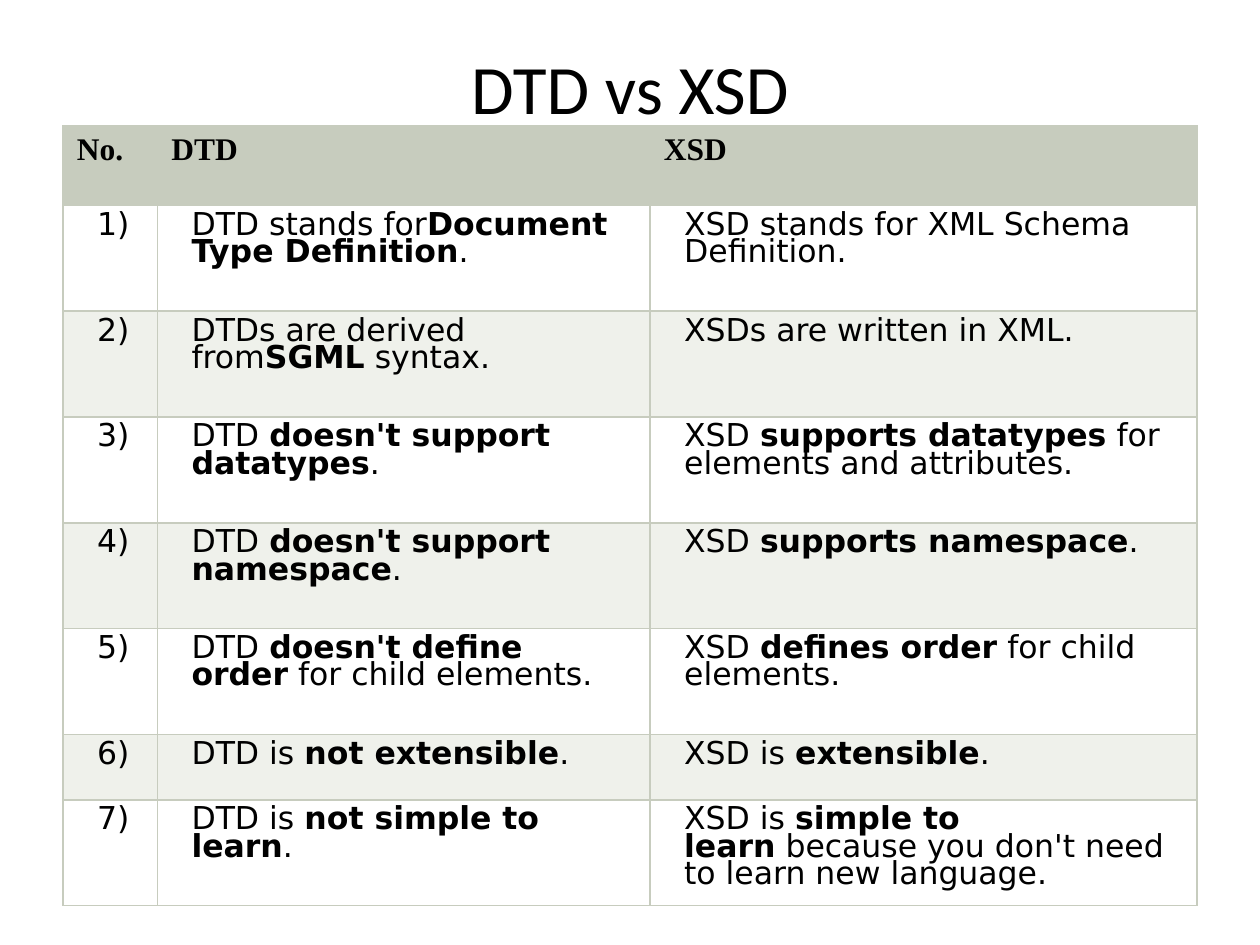
from dataclasses import dataclass

from pptx import Presentation
from pptx import util as u
from pptx.dml.color import RGBColor
from pptx.enum import text
from pptx.oxml import parse_xml
from pptx.oxml.ns import nsdecls


@dataclass(frozen=True)
class Theme:
    ink: str = "000000"
    accent: str = "C7CCBE"
    bands: tuple = ("FFFFFF", "EFF1EB")
    title_font: str = "Calibri"
    header_font: str = "Times New Roman"
    body_font: str = "DejaVu Sans"
    title_size: float = 39.6
    cell_size: float = 18
    line_spacing: float = 15.6
    border: float = 1


@dataclass(frozen=True)
class CellStyle:
    font: str
    margin: float
    indent: float
    bold: bool = False


@dataclass(frozen=True)
class Comparison:
    """One table row; asterisks enclose bold words."""
    dtd: str
    xsd: str
    height: float = 0.84


THEME = Theme()
HEADER = CellStyle(THEME.header_font, 0.11, 0, True)
BODY = CellStyle(THEME.body_font, 0.08, 0.19)
HEADINGS = ("No.", "DTD", "XSD")
HEADER_HEIGHT = 0.63
COLUMN_WIDTHS = (0.75, 3.91, 4.34)
NBSP = chr(160)

COMPARISONS = (
    Comparison("DTD stands for*Document Type Definition*.",
               "XSD stands for XML Schema Definition."),
    Comparison("DTDs are derived from*SGML* syntax.",
               "XSDs are written in XML."),
    Comparison("DTD *doesn't support datatypes*.",
               "XSD *supports datatypes* for elements and attributes."),
    Comparison("DTD *doesn't support namespace*.",
               "XSD *supports namespace*."),
    Comparison("DTD *doesn't define order* for child elements.",
               "XSD *defines order* for child elements."),
    Comparison("DTD is *not extensible*.", "XSD is *extensible*.", 0.52),
    Comparison("DTD is *not simple to learn*.",
               "XSD is *simple to learn* because you don't need to learn new language."),
)


def add_run(p, words: str, font: str, size: float, bold: bool = False) -> None:
    r = p.add_run()
    r.text = words
    for name, value in {"name": font, "size": u.Pt(size), "bold": bold}.items():
        setattr(r.font, name, value)
    r.font.color.rgb = RGBColor.from_string(THEME.ink)


def add_title(s, words: str) -> None:
    sp = s.shapes.add_textbox(u.Inches(0.5), u.Inches(0.3), u.Inches(9), u.Inches(0.78))
    tf = sp.text_frame
    tf.word_wrap = True
    tf.vertical_anchor = text.MSO_ANCHOR.MIDDLE
    p = tf.paragraphs[0]
    p.alignment = text.PP_ALIGN.CENTER
    add_run(p, words, THEME.title_font, THEME.title_size)


def add_borders(cell) -> None:
    """Line all four sides; borders must precede the fill in tcPr."""
    tc_pr = cell._tc.get_or_add_tcPr()
    for i, side in enumerate(("lnL", "lnR", "lnT", "lnB")):
        tc_pr.insert(i, parse_xml(
            f'<a:{side} {nsdecls("a")} w="{u.Pt(THEME.border)}"><a:solidFill>'
            f'<a:srgbClr val="{THEME.accent}"/></a:solidFill></a:{side}>'))


def fill_cell(cell, words: str, style: CellStyle, color: str) -> None:
    for side in ("left", "top", "right", "bottom"):
        setattr(cell, f"margin_{side}", u.Inches(style.margin))
    cell.vertical_anchor = text.MSO_ANCHOR.TOP
    cell.fill.solid()
    cell.fill.fore_color.rgb = RGBColor.from_string(color)
    add_borders(cell)

    p = cell.text_frame.paragraphs[0]
    p.line_spacing = u.Pt(THEME.line_spacing)
    p_pr = p._p.get_or_add_pPr()
    p_pr.set("marL", str(u.Inches(style.indent)))
    p_pr.set("indent", "0")
    # Spaces that touch bold words do not break.
    marked = words.replace(" *", NBSP + "*").replace("* ", "*" + NBSP)
    for i, part in enumerate(marked.split("*")):
        add_run(p, part, style.font, THEME.cell_size, style.bold or i % 2 == 1)


def add_comparison_table(s) -> None:
    heights = [HEADER_HEIGHT] + [c.height for c in COMPARISONS]
    frame = s.shapes.add_table(len(heights), len(COLUMN_WIDTHS), u.Inches(0.5), u.Inches(1),
                               u.Inches(sum(COLUMN_WIDTHS)), u.Inches(sum(heights)))
    table = frame.table
    for column, width in zip(table.columns, COLUMN_WIDTHS):
        column.width = u.Inches(width)
    for row, height in zip(table.rows, heights):
        row.height = u.Inches(height)

    for col, heading in enumerate(HEADINGS):
        fill_cell(table.cell(0, col), heading, HEADER, THEME.accent)
    for number, item in enumerate(COMPARISONS, start=1):
        band = THEME.bands[(number - 1) % 2]
        for col, words in enumerate((f"{number})", item.dtd, item.xsd)):
            fill_cell(table.cell(number, col), words, BODY, band)


def main() -> None:
    prs = Presentation()
    prs.slide_width, prs.slide_height = u.Inches(10), u.Inches(7.5)
    s = prs.slides.add_slide(prs.slide_layouts[6])
    add_title(s, "DTD vs XSD")
    add_comparison_table(s)
    prs.save("out.pptx")


if __name__ == "__main__":
    main()
